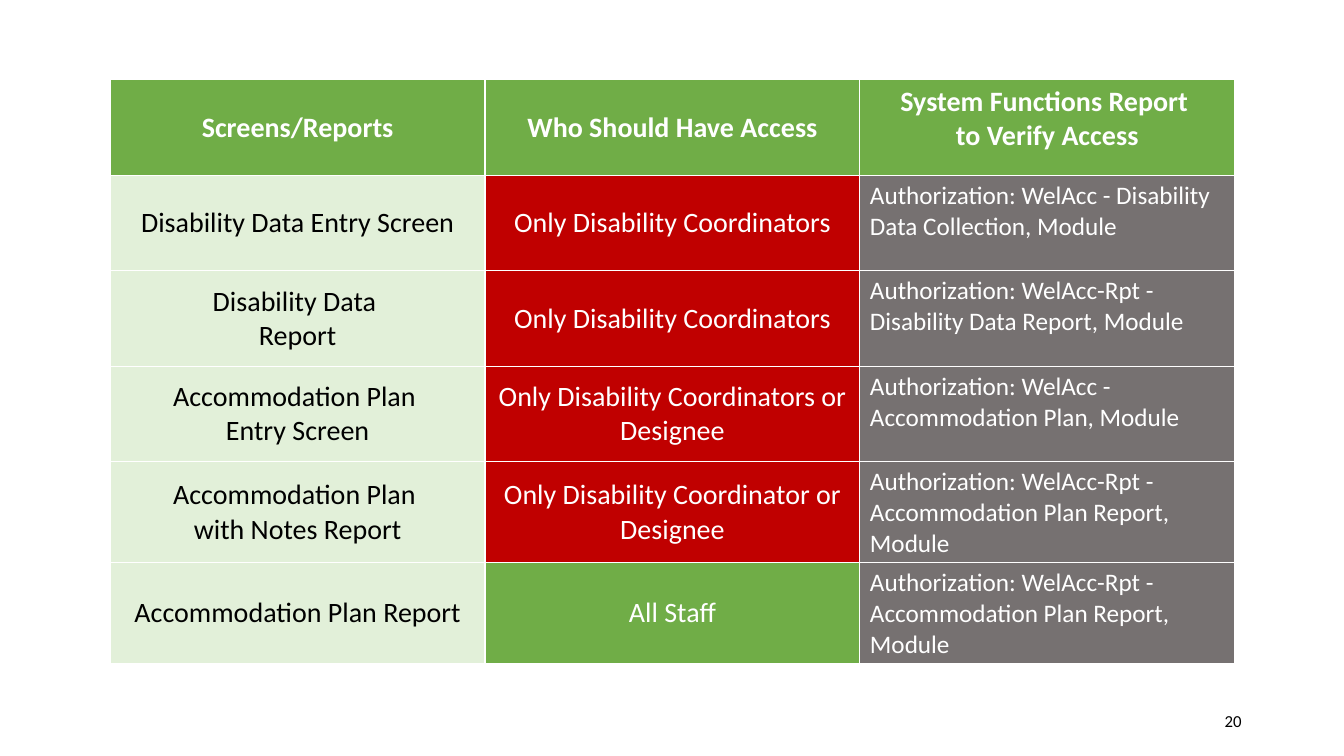
from dataclasses import dataclass

from lxml import etree
from pptx import Presentation
from pptx import util as u
from pptx.dml.color import RGBColor
from pptx.enum import text
from pptx.oxml import ns
from pptx.table import _Cell
from pptx.text.text import TextFrame

PX = 9525
FONT = "Calibri"
WHITE = RGBColor(0xFF, 0xFF, 0xFF)
BLACK = RGBColor(0x00, 0x00, 0x00)
GREEN = RGBColor(0x70, 0xAD, 0x47)
PALE_GREEN = RGBColor(0xE2, 0xF0, 0xD9)
RED = RGBColor(0xC0, 0x00, 0x00)
GREY = RGBColor(0x76, 0x71, 0x71)
LEFT, CENTER, RIGHT = text.PP_ALIGN.LEFT, text.PP_ALIGN.CENTER, text.PP_ALIGN.RIGHT
TOP, MIDDLE = text.MSO_ANCHOR.TOP, text.MSO_ANCHOR.MIDDLE
TABLE_LEFT, TABLE_TOP, COLUMN_WIDTH, ROW_HEIGHT = 105, 76, 357, 91


@dataclass(frozen=True)
class CellStyle:
    """Look of one kind of table cell."""

    fill: RGBColor
    color: RGBColor = WHITE
    size: int = 20
    bold: bool = False
    align: text.PP_ALIGN = CENTER
    anchor: text.MSO_ANCHOR = MIDDLE


@dataclass(frozen=True)
class AccessRow:
    """One screen or report, its audience and the function that verifies it."""

    screen: str
    audience: str
    function: str
    audience_style: CellStyle


HEADER = CellStyle(GREEN, bold=True)
HEADER_TOP = CellStyle(GREEN, bold=True, anchor=TOP)
SCREEN = CellStyle(PALE_GREEN, color=BLACK)
RESTRICTED = CellStyle(RED)
OPEN = CellStyle(GREEN)
FUNCTION = CellStyle(GREY, size=18, align=LEFT, anchor=TOP)

HEADINGS = [
    ("Screens/Reports", HEADER),
    ("Who Should Have Access", HEADER),
    ("System Functions Report \nto Verify Access", HEADER_TOP),
]
ACCESS_ROWS = [
    AccessRow("Disability Data Entry Screen", "Only Disability Coordinators",
              "WelAcc - Disability Data Collection", RESTRICTED),
    AccessRow("Disability Data \nReport", "Only Disability Coordinators",
              "WelAcc-Rpt - Disability Data Report", RESTRICTED),
    AccessRow("Accommodation Plan \nEntry Screen", "Only Disability Coordinators or Designee",
              "WelAcc - Accommodation Plan", RESTRICTED),
    AccessRow("Accommodation Plan \nwith Notes Report", "Only Disability Coordinator or Designee",
              "WelAcc-Rpt - Accommodation Plan Report", RESTRICTED),
    AccessRow("Accommodation Plan Report", "All Staff",
              "WelAcc-Rpt - Accommodation Plan Report", OPEN),
]


def px(length: int) -> u.Emu:
    """Turn px into EMU."""
    return u.Emu(length * PX)


def write(frame: TextFrame, words: str, size: int, color: RGBColor,
          align: text.PP_ALIGN, bold: bool = False) -> None:
    """Fill a text frame with evenly formatted paragraphs."""
    frame.text = words
    frame.word_wrap = True
    for para in frame.paragraphs:
        para.alignment = align
        para.font.name = FONT
        para.font.size = u.Pt(size)
        para.font.bold = bold
        para.font.color.rgb = color


def add_borders(cell: _Cell) -> None:
    """Give a cell thin white borders on all four sides."""
    properties = cell._tc.get_or_add_tcPr()
    for index, side in enumerate(("lnL", "lnR", "lnT", "lnB")):
        line = etree.Element(ns.qn(f"a:{side}"), w=str(u.Pt(1)))
        fill = etree.SubElement(line, ns.qn("a:solidFill"))
        etree.SubElement(fill, ns.qn("a:srgbClr"), val=str(WHITE))
        properties.insert(index, line)


def fill_cell(cell: _Cell, words: str, style: CellStyle) -> None:
    """Write and style one table cell."""
    write(cell.text_frame, words, style.size, style.color, style.align, style.bold)
    cell.vertical_anchor = style.anchor
    cell.fill.solid()
    cell.fill.fore_color.rgb = style.fill
    add_borders(cell)


def main() -> None:
    """Build the access table slide."""
    deck = Presentation()
    deck.slide_width, deck.slide_height = px(1280), px(720)
    page = deck.slides.add_slide(deck.slide_layouts[6])

    number = page.shapes.add_textbox(px(904), px(667), px(288), px(38)).text_frame
    write(number, "20", 12, BLACK, RIGHT)
    number.vertical_anchor = MIDDLE

    grid = [HEADINGS] + [
        [(row.screen, SCREEN), (row.audience, row.audience_style),
         (f"Authorization: {row.function}, Module", FUNCTION)]
        for row in ACCESS_ROWS
    ]
    rows, columns = len(grid), len(HEADINGS)
    table = page.shapes.add_table(
        rows, columns, px(TABLE_LEFT), px(TABLE_TOP),
        px(columns * COLUMN_WIDTH), px(rows * ROW_HEIGHT)).table
    table.first_row = table.horz_banding = False
    for row_index, entries in enumerate(grid):
        for column_index, (words, style) in enumerate(entries):
            fill_cell(table.cell(row_index, column_index), words, style)

    deck.save("out.pptx")


if __name__ == "__main__":
    main()
